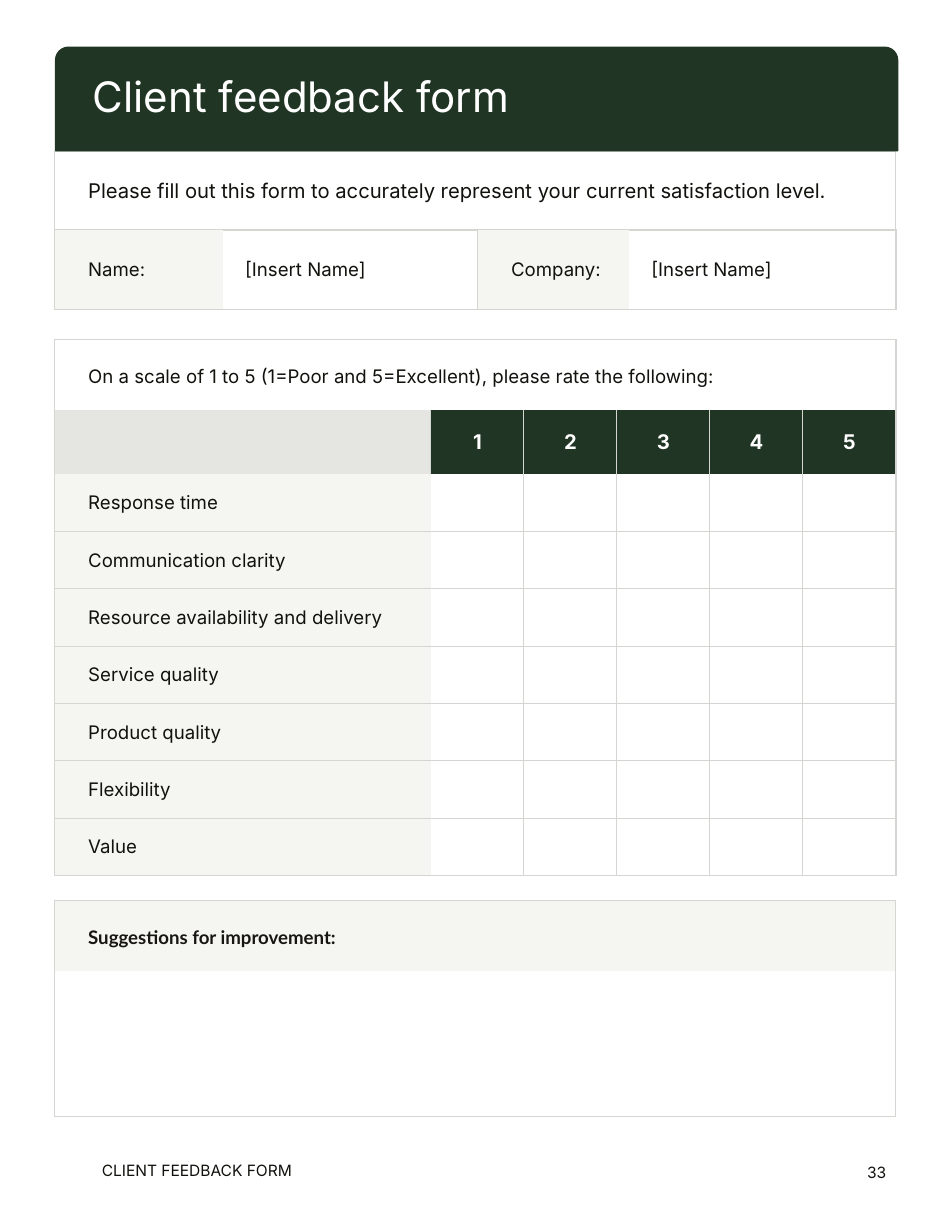
from dataclasses import dataclass

from lxml import etree
from pptx import Presentation
from pptx.dml.color import RGBColor
from pptx.enum.shapes import MSO_SHAPE
from pptx.enum.text import MSO_ANCHOR, PP_ALIGN
from pptx.oxml.ns import qn
from pptx.shapes.autoshape import Shape
from pptx.table import Table, _Cell
from pptx.text.text import TextFrame
from pptx.util import Cm, Pt

INK = RGBColor(0x11, 0x11, 0x0D)
BROWN = RGBColor(0x18, 0x16, 0x10)
GREEN = RGBColor(0x20, 0x35, 0x24)
WHITE = RGBColor(0xFF, 0xFF, 0xFF)
PALE = RGBColor(0xF5, 0xF5, 0xF2)
GRAY = RGBColor(0xE5, 0xE5, 0xE2)
RULE = RGBColor(0xD5, 0xD5, 0xD2)
MID, TOP = MSO_ANCHOR.MIDDLE, MSO_ANCHOR.TOP
LEFT, RIGHT, MIDST = PP_ALIGN.LEFT, PP_ALIGN.RIGHT, PP_ALIGN.CENTER
RECT, ROUND = MSO_SHAPE.RECTANGLE, MSO_SHAPE.ROUND_2_SAME_RECTANGLE

EDGE = 1.24
WIDTH = 19.08
PAD = 0.25
DEEP = 0.76
GAP = 0.51
INSET = (DEEP, PAD, PAD, PAD)
EVEN = (PAD, PAD, PAD, PAD)
TAGS = {"l": "a:lnL", "r": "a:lnR", "t": "a:lnT", "b": "a:lnB"}
TOPICS = (
    "Response time",
    "Communication clarity",
    "Resource availability and delivery",
    "Service quality",
    "Product quality",
    "Flexibility",
    "Value",
)
MARKS = ("1", "2", "3", "4", "5")


@dataclass(frozen=True)
class Style:
    size: float = 12
    color: RGBColor = INK
    bold: bool = False
    font: str = "Inter"
    align: PP_ALIGN = LEFT
    space: float = 1.0


@dataclass(frozen=True)
class Box:
    left: float
    top: float
    width: float
    height: float


BODY = Style()
FOOT = Style(10)
PAGE = Style(10, align=RIGHT)
LEAD = Style(13)
TITLE = Style(27, WHITE, space=0.8)
HEAD = Style(13, WHITE, True, align=MIDST)
ASK = Style(space=1.15)
HINT = Style(12, BROWN, True, "Lato", space=1.15)


def write(frame: TextFrame, text: str, style: Style) -> None:
    frame.text = text
    line = frame.paragraphs[0]
    line.alignment = style.align
    line.line_spacing = style.space
    for run in line.runs:
        run.font.name = style.font
        run.font.size = Pt(style.size)
        run.font.bold = style.bold
        run.font.color.rgb = style.color


def inset(item: TextFrame | _Cell, pads: tuple[float, ...]) -> None:
    item.margin_left, item.margin_top, item.margin_right, item.margin_bottom = map(Cm, pads)


def place(box: Box) -> tuple[Cm, ...]:
    return Cm(box.left), Cm(box.top), Cm(box.width), Cm(box.height)


def label(slide, box: Box, text: str, style: Style, anchor: MSO_ANCHOR) -> None:
    frame = slide.shapes.add_textbox(*place(box)).text_frame
    frame.word_wrap = True
    frame.vertical_anchor = anchor
    inset(frame, EVEN)
    write(frame, text, style)


def panel(slide, kind: MSO_SHAPE, box: Box, line: RGBColor, text: str,
          style: Style, pads: tuple[float, ...]) -> Shape:
    shape = slide.shapes.add_shape(kind, *place(box))
    shape.shadow.inherit = False
    shape.fill.background()
    shape.line.color.rgb = line
    shape.line.width = Pt(0.75)
    frame = shape.text_frame
    frame.word_wrap = True
    frame.vertical_anchor = MID
    inset(frame, pads)
    write(frame, text, style)
    return shape


def grid(slide, top: float, cols: list[float], rows: list[float]) -> Table:
    box = Box(EDGE, top, sum(cols), sum(rows))
    table = slide.shapes.add_table(len(rows), len(cols), *place(box)).table
    table.first_row = table.horz_banding = False
    for col, width in zip(table.columns, cols):
        col.width = Cm(width)
    for row, height in zip(table.rows, rows):
        row.height = Cm(height)
    return table


def dress(cell: _Cell, sides: str, fill: RGBColor | None = None, text: str = "",
          style: Style = BODY, pads: tuple[float, ...] = INSET) -> None:
    props = cell._tc.get_or_add_tcPr()
    for side, tag in TAGS.items():
        line = etree.SubElement(props, qn(tag), w=str(Pt(0.75)))
        if side in sides:
            solid = etree.SubElement(line, qn("a:solidFill"))
            etree.SubElement(solid, qn("a:srgbClr"), val=str(RULE))
        else:
            etree.SubElement(line, qn("a:noFill"))
    if fill is None:
        cell.fill.background()
    else:
        cell.fill.solid()
        cell.fill.fore_color.rgb = fill
    if text:
        cell.vertical_anchor = MID
        inset(cell, pads)
        write(cell.text_frame, text, style)


def hints(slide) -> None:
    table = grid(slide, 20.42, [WIDTH], [1.6, 3.3])
    dress(table.cell(0, 0), "ltr", PALE, "Suggestions for improvement:", HINT,
          (DEEP, GAP, GAP, GAP))
    dress(table.cell(1, 0), "lrb")


def scores(slide) -> None:
    table = grid(slide, 7.7, [8.53] + [2.11] * len(MARKS),
                 [1.6, 1.45] + [1.3] * len(TOPICS))
    last = len(MARKS)
    table.cell(0, 0).merge(table.cell(0, last))
    for col in range(last + 1):
        dress(table.cell(0, col), "ltr")
    ask = table.cell(0, 0)
    ask.vertical_anchor = MID
    inset(ask, (DEEP, GAP, 0, GAP))
    write(ask.text_frame,
          "On a scale of 1 to 5 (1=Poor and 5=Excellent), please rate the following:", ASK)
    dress(table.cell(1, 0), "lr", GRAY)
    for col, mark in enumerate(MARKS, 1):
        dress(table.cell(1, col), "lr", GREEN, mark, HEAD, EVEN)
    for row, topic in enumerate(TOPICS, 2):
        ends = "b" if row == 2 else "tb"
        dress(table.cell(row, 0), "l" + ends, PALE, topic)
        for col in range(1, last + 1):
            dress(table.cell(row, col), ("r" if col == 1 else "lr") + ends)


def names(slide) -> None:
    table = grid(slide, 5.21, [3.81, 5.78, 3.43, 6.06], [1.8])
    for col, text in enumerate(("Name:", "Company:")):
        dress(table.cell(0, 2 * col), "ltb", PALE, text, BODY, (DEEP, PAD, GAP, PAD))
        dress(table.cell(0, 2 * col + 1), "trb", None, "[Insert Name]", BODY,
              (GAP, PAD, GAP, PAD))


def main() -> None:
    deck = Presentation()
    deck.slide_width, deck.slide_height = Cm(21.59), Cm(27.94)
    slide = deck.slides.add_slide(deck.slide_layouts[6])
    label(slide, Box(2.06, 26.11, 8.33, 0.94), "CLIENT FEEDBACK FORM", FOOT, TOP)
    label(slide, Box(19.3, 25.68, 1.05, 1.8), "33", PAGE, MID)
    panel(slide, RECT, Box(EDGE, 3.43, WIDTH, 1.8), RULE,
          "Please fill out this form to accurately represent your current satisfaction level.",
          LEAD, (DEEP, 0, 0, 0))
    hints(slide)
    scores(slide)
    names(slide)
    banner = panel(slide, ROUND, Box(1.26, 1.07, 19.1, 2.35), GREEN,
                   "Client feedback form", TITLE, INSET)
    banner.fill.solid()
    banner.fill.fore_color.rgb = GREEN
    banner.adjustments[0] = 0.125
    banner.adjustments[1] = 0
    deck.save("out.pptx")


if __name__ == "__main__":
    main()
